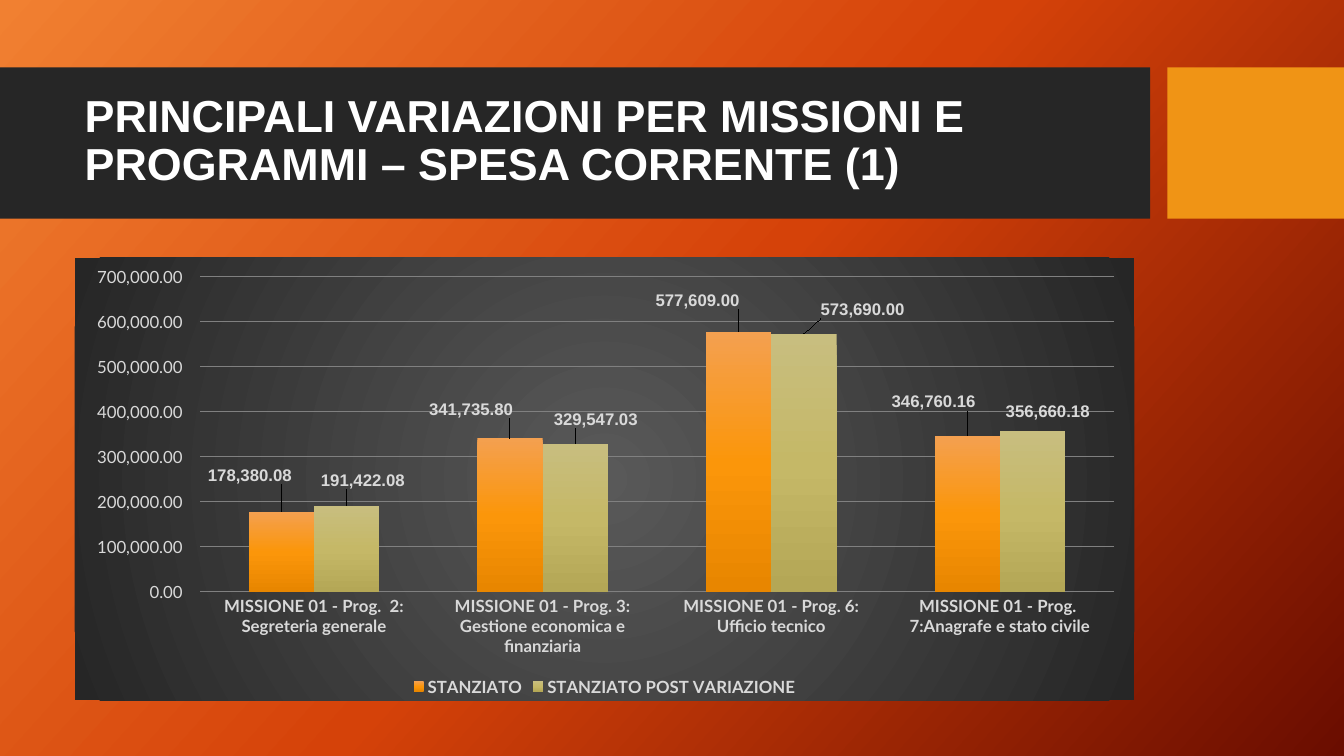
from lxml import etree
from pptx import Presentation
from pptx.chart.data import CategoryChartData
from pptx.dml.color import RGBColor
from pptx.enum.chart import XL_CHART_TYPE, XL_LABEL_POSITION, XL_LEGEND_POSITION, XL_TICK_MARK
from pptx.enum.shapes import MSO_SHAPE
from pptx.enum.text import MSO_ANCHOR, MSO_AUTO_SIZE, PP_ALIGN
from pptx.oxml import parse_xml
from pptx.oxml.ns import nsdecls, qn
from pptx.util import Cm, Pt

TITLE = "PRINCIPALI VARIAZIONI PER MISSIONI E PROGRAMMI – SPESA CORRENTE (1)"
CATEGORIES = [
    "MISSIONE 01 - Prog.  2: Segreteria generale",
    "MISSIONE 01 - Prog. 3: Gestione economica e finanziaria",
    "MISSIONE 01 - Prog. 6: Ufficio tecnico",
    "MISSIONE 01 - Prog.  7:Anagrafe e stato civile",
]
# Label shifts are fractions of the chart's width and height
SERIES = [
    {
        "name": "STANZIATO",
        "values": [178380.08, 341735.80, 577609.00, 346760.16],
        "stops": [(0, "F4A050"), (50, "FB960A"), (100, "E88600")],
        "shifts": [(-0.023, -0.052), (-0.03, -0.036), (-0.032, -0.041), (-0.025, -0.047)],
    },
    {
        "name": "STANZIATO POST VARIAZIONE",
        "values": [191422.08, 329547.03, 573690.00, 356660.18],
        "stops": [(0, "C8BE7F"), (50, "C5B867"), (100, "B4A756")],
        "shifts": [(0.022, -0.027), (0.026, -0.025), (0.062, -0.025), (0.021, -0.016)],
    },
]
BACKGROUND_STOPS = [(0, "F18031"), (50, "D54209"), (100, "6A0D00")]
CHART_STOPS = [(0, "595959"), (100, "262626")]
BANDS = [(0, 28.98, "262626"), (29.41, 4.45, "F09415")]  # left, width, colour
BAND_TOP, BAND_HEIGHT = 1.7, 3.81
LEFT, WIDTH = 1.88, 26.7
PLOT_LAYOUT = {"x": 0.118, "y": 0.043, "w": 0.863, "h": 0.712}
NUMBER_FORMAT = "#,##0.00\\ _€"
LIGHT_GREY = "D9D9D9"


def color(hex_text):
    return RGBColor.from_string(hex_text)


def set_font(font, name, size, hex_text, bold=False):
    font.name, font.size, font.bold = name, Pt(size), bold
    font.color.rgb = color(hex_text)


def gradient(stops, angle=None):
    """Return a gradFill element: linear at an angle, or circular without one."""
    marks = "".join(
        f'<a:gs pos="{place * 1000}"><a:srgbClr val="{shade}"/></a:gs>' for place, shade in stops
    )
    if angle is None:
        course = ('<a:path path="circle"><a:fillToRect l="50000" t="50000" '
                  'r="50000" b="50000"/></a:path>')
    else:
        course = f'<a:lin ang="{angle * 60000}" scaled="0"/>'
    return parse_xml(f'<a:gradFill {nsdecls("a")} rotWithShape="1">'
                     f'<a:gsLst>{marks}</a:gsLst>{course}</a:gradFill>')


def replace_solid(holder, stops, angle):
    solid = holder.find(qn("a:solidFill"))
    holder.replace(solid, gradient(stops, angle))


def manual_layout(values, inner=False):
    layout = etree.Element(qn("c:layout"))
    manual = etree.SubElement(layout, qn("c:manualLayout"))
    settings = {}
    if inner:
        settings = {"layoutTarget": "inner", "xMode": "edge", "yMode": "edge"}
    for key, value in {**settings, **values}.items():
        etree.SubElement(manual, qn(f"c:{key}")).set("val", str(value))
    return layout


def add_bands(slide):
    for left, width, shade in BANDS:
        band = slide.shapes.add_shape(
            MSO_SHAPE.RECTANGLE, Cm(left), Cm(BAND_TOP), Cm(width), Cm(BAND_HEIGHT))
        band.shadow.inherit = False
        band.fill.solid()
        band.fill.fore_color.rgb = color(shade)
        band.line.fill.background()


def fill_title(slide):
    title = slide.shapes.title
    title.element.getparent().append(title.element)  # in front of the bands
    title.left, title.top, title.width, title.height = Cm(LEFT), Cm(2.08), Cm(WIDTH), Cm(3)
    frame = title.text_frame
    frame.text = TITLE
    frame.word_wrap = True
    frame.auto_size = MSO_AUTO_SIZE.NONE
    frame.vertical_anchor = MSO_ANCHOR.MIDDLE
    para = frame.paragraphs[0]
    para.alignment = PP_ALIGN.LEFT
    para.line_spacing = 0.9
    set_font(para.font, "Arial", 32, "FFFFFF", True)


def format_axes(chart):
    for axis, bold in ((chart.category_axis, True), (chart.value_axis, False)):
        axis.major_tick_mark = axis.minor_tick_mark = XL_TICK_MARK.NONE
        axis.format.line.fill.background()
        set_font(axis.tick_labels.font, "Lato", 12, LIGHT_GREY, bold)
    axis = chart.value_axis
    axis.minimum_scale, axis.maximum_scale, axis.major_unit = 0, 700000, 100000
    axis.tick_labels.number_format = NUMBER_FORMAT
    axis.tick_labels.number_format_is_linked = False
    axis.has_major_gridlines = True
    axis.major_gridlines.format.line.color.rgb = color("808080")
    axis.major_gridlines.format.line.width = Pt(0.75)


def format_series(series, node, details):
    series.format.fill.solid()
    replace_solid(node.find(qn("c:spPr")), details["stops"], 90)
    labels = series.data_labels
    labels.show_value = True
    labels.number_format = NUMBER_FORMAT
    labels.number_format_is_linked = False
    labels.position = XL_LABEL_POSITION.OUTSIDE_END
    set_font(labels.font, "Arial", 12, LIGHT_GREY, True)
    for index in range(len(CATEGORIES)):
        label = series.points[index].data_label
        set_font(label.font, "Arial", 12, LIGHT_GREY, True)
        label.position = XL_LABEL_POSITION.OUTSIDE_END
    for mark, (across, down) in zip(node.findall(f".//{qn('c:dLbl')}"), details["shifts"]):
        mark.find(qn("c:idx")).addnext(manual_layout({"x": across, "y": down}))


def add_spending_chart(slide):
    data = CategoryChartData(number_format=NUMBER_FORMAT)
    data.categories = CATEGORIES
    for details in SERIES:
        data.add_series(details["name"], details["values"])
    chart = slide.shapes.add_chart(
        XL_CHART_TYPE.COLUMN_CLUSTERED, Cm(LEFT), Cm(6.5), Cm(WIDTH), Cm(11.15), data).chart
    chart.has_title = False
    set_font(chart.font, "Lato", 10, "FFFFFF")
    chart.has_legend = True
    chart.legend.position = XL_LEGEND_POSITION.BOTTOM
    chart.legend.include_in_layout = False
    set_font(chart.legend.font, "Lato", 12, LIGHT_GREY, True)
    format_axes(chart)

    plot = chart.plots[0]
    plot.gap_width, plot.overlap, plot.vary_by_categories = 150, 0, False
    nodes = chart.element.findall(f".//{qn('c:ser')}")
    for series, node, details in zip(plot.series, nodes, SERIES):
        format_series(series, node, details)

    area = chart.element.find(f".//{qn('c:plotArea')}")
    for layout in area.findall(qn("c:layout")):
        area.remove(layout)
    area.insert(0, manual_layout(PLOT_LAYOUT, inner=True))
    panel = parse_xml(f'<c:spPr {nsdecls("c", "a")}><a:ln><a:noFill/></a:ln></c:spPr>')
    panel.insert(0, gradient(CHART_STOPS))
    chart.element.find(qn("c:chart")).addnext(panel)


def main():
    deck = Presentation()
    deck.slide_width, deck.slide_height = Cm(33.86), Cm(19.05)
    slide = deck.slides.add_slide(deck.slide_layouts[5])
    slide.background.fill.solid()
    replace_solid(slide.element.find(f".//{qn('p:bgPr')}"), BACKGROUND_STOPS, 42)
    add_bands(slide)
    fill_title(slide)
    add_spending_chart(slide)
    deck.save("out.pptx")


if __name__ == "__main__":
    main()
